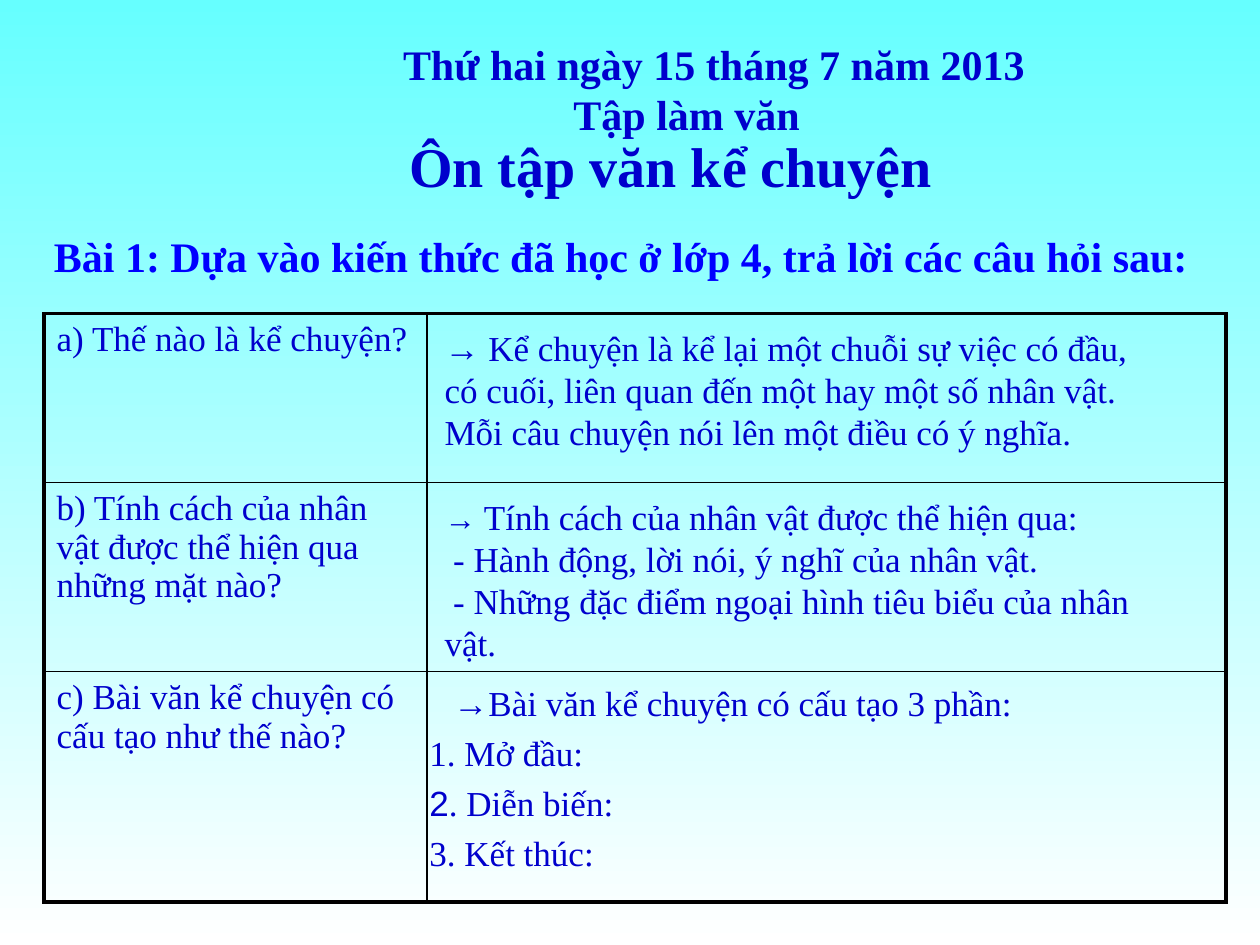
from lxml import etree
from pptx import Presentation
from pptx.dml.color import RGBColor
from pptx.enum import text as txt
from pptx.oxml import ns
from pptx.util import Inches, Pt

SERIF = "Times New Roman"
NAVY = "0000CC"
CENTER = txt.PP_ALIGN.CENTER


def paint(color_format, hex_color):
    color_format.rgb = RGBColor.from_string(hex_color)


def write(frame, paragraphs, size=20, color=NAVY, bold=False, align=None,
          leading=1.2, before=0):
    """Each paragraph is a string or a list of (string, size, font) runs."""
    frame.word_wrap = True
    frame.vertical_anchor = txt.MSO_ANCHOR.TOP
    for i, content in enumerate(paragraphs):
        line = frame.paragraphs[0] if i == 0 else frame.add_paragraph()
        line.alignment = align or txt.PP_ALIGN.LEFT
        line.space_before = Pt(before)
        if leading:
            line.line_spacing = Pt(size * leading)
        runs = [(content, size, SERIF)] if isinstance(content, str) else content
        for words, run_size, font in runs:
            run = line.add_run()
            run.text = words
            run.font.size = Pt(run_size)
            run.font.name = font
            run.font.bold = bold
            paint(run.font.color, color)


def add_text(slide, box, paragraphs, **style):
    frame = slide.shapes.add_textbox(*map(Inches, box)).text_frame
    frame.auto_size = txt.MSO_AUTO_SIZE.SHAPE_TO_FIT_TEXT
    write(frame, paragraphs, **style)


def set_border(cell, side, width):
    props = cell._tc.get_or_add_tcPr()
    line = etree.SubElement(props, ns.qn(f"a:ln{side}"), w=str(Pt(width)))
    fill = etree.SubElement(line, ns.qn("a:solidFill"))
    etree.SubElement(fill, ns.qn("a:srgbClr"), val="000000")


def add_background(slide):
    fill = slide.background.fill
    fill.gradient()
    fill.gradient_angle = 270
    for stop, position, color in zip(fill.gradient_stops, (0, 1), ("66FFFF", "FFFFFF")):
        stop.position = position
        paint(stop.color, color)


def add_heading(slide, left, top):
    add_text(slide, (left, top, 7.01, 0.5), ["Thứ hai ngày 15 tháng 7 năm 2013"],
             size=24, bold=True, align=CENTER)
    add_text(slide, (left + 1.4, top + 0.39, 3.78, 0.5), ["Tập làm văn"],
             size=24, bold=True, align=CENTER)

    # Lesson title
    title = slide.shapes.title
    title.left, title.top = Inches(left + 0.73), Inches(top + 0.73)
    title.width, title.height = Inches(4.87), Inches(0.63)
    title.text_frame.auto_size = txt.MSO_AUTO_SIZE.NONE
    write(title.text_frame, ["Ôn tập văn kể chuyện"], size=32, bold=True, align=CENTER)


def add_question_table(slide, left, top, widths, heights, questions):
    rows, cols = len(heights), len(widths)
    table = slide.shapes.add_table(
        rows, cols, Inches(left), Inches(top),
        Inches(sum(widths)), Inches(sum(heights))).table
    table.first_row = table.horz_banding = False
    for column, width in zip(table.columns, widths):
        column.width = Inches(width)
    for r, height in enumerate(heights):
        table.rows[r].height = Inches(height)
        for c in range(cols):
            cell = table.cell(r, c)
            outer = {"L": c == 0, "R": c == cols - 1, "T": r == 0, "B": r == rows - 1}
            for side, is_outer in outer.items():
                set_border(cell, side, 2.25 if is_outer else 1)
            cell.fill.background()
        write(table.cell(r, 0).text_frame, [questions[r]], leading=None, before=4)


def add_answers(slide, left, top):
    # Answers a and b
    add_text(slide, (left, top, 5.67, 1.6), [
        "→ Kể chuyện là kể lại một chuỗi sự việc có đầu, có cuối, liên quan đến "
        "một hay một số nhân vật. Mỗi câu chuyện nói lên một điều có ý nghĩa."])
    add_text(slide, (left, top + 1.34, 6.06, 1.93), [
        [("→ ", 18, SERIF), ("Tính cách của nhân vật được thể hiện qua:", 20, SERIF)],
        " - Hành động, lời nói, ý nghĩ của nhân vật.",
        " - Những đặc điểm ngoại hình tiêu biểu của nhân vật."])

    # Answer c and its three parts
    add_text(slide, (left + 0.07, top + 2.82, 5.83, 1.93),
             ["→Bài văn kể chuyện có cấu tạo 3 phần:"])
    parts = ["1. Mở đầu:",
             [("2", 20, "Arial"), (". Diễn biến:", 20, SERIF)],
             "3. Kết thúc:"]
    for i, part in enumerate(parts):
        add_text(slide, (left - 0.12, top + 3.22 + i * 0.395, 2.6, 0.43), [part])


def main():
    deck = Presentation()
    deck.slide_width, deck.slide_height = Inches(10), Inches(7.5)
    slide = deck.slides.add_slide(deck.slide_layouts[5])

    add_background(slide)
    add_heading(slide, 2.16, 0.26)
    add_text(slide, (0.33, 1.78, 9.67, 0.5),
             ["Bài 1: Dựa vào kiến thức đã học ở lớp 4, trả lời các câu hỏi sau:"],
             size=24, color="0000FF", bold=True)
    add_question_table(slide, 0.35, 2.49, (3.04, 6.34), (1.34, 1.5, 1.83), [
        "a) Thế nào là kể chuyện?",
        "b) Tính cách của nhân vật được thể hiện qua những mặt nào?",
        "c) Bài văn kể chuyện có cấu tạo như thế nào?"])
    add_answers(slide, 3.43, 2.54)
    deck.save("out.pptx")


if __name__ == "__main__":
    main()
